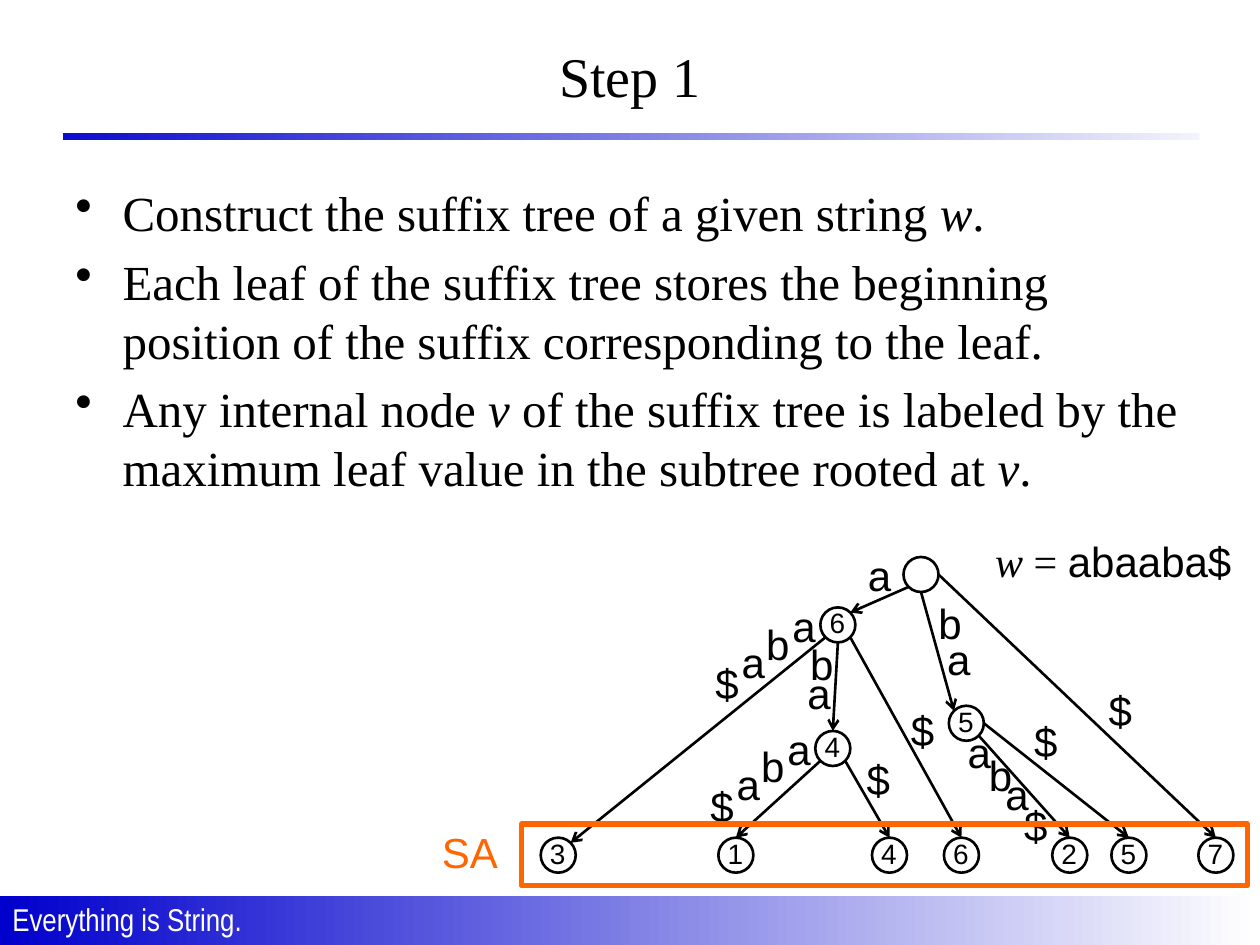
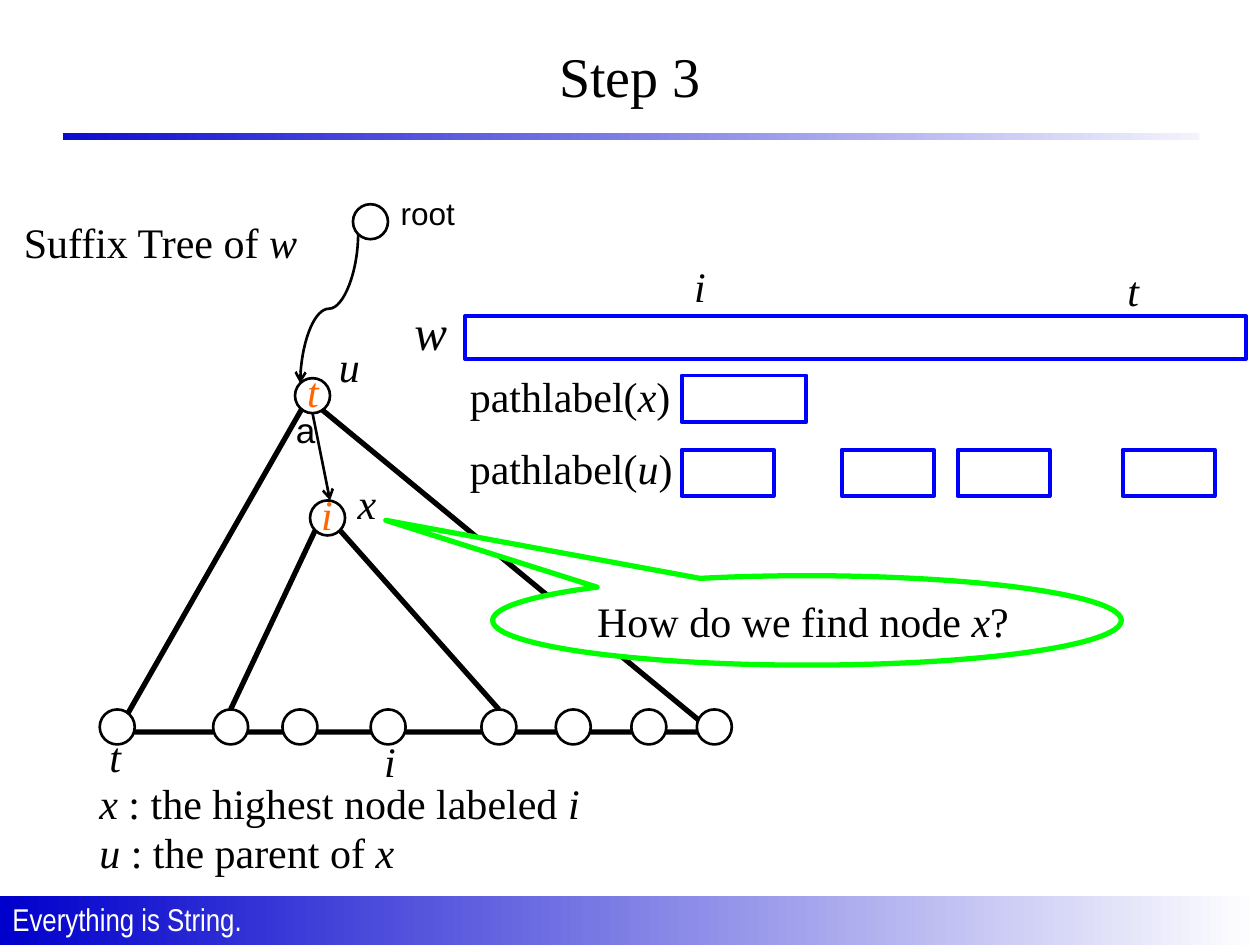
from math import cos, radians, sin

from lxml.etree import SubElement
from pptx import Presentation
from pptx.dml.color import RGBColor
from pptx.enum.shapes import MSO_CONNECTOR as CONN, MSO_SHAPE as SHAPE
from pptx.enum.text import MSO_ANCHOR as ANCHOR, MSO_AUTO_SIZE as AUTO, PP_ALIGN as ALIGN
from pptx.oxml.ns import qn
from pptx.util import Pt

COLORS = {"ink": "000000", "paper": "FFFFFF", "band": "0000CC",
          "accent": "FF6600", "bar": "0000FF", "callout": "00FF00"}
SERIF, SANS, NARROW = "Times New Roman", "Arial", "Arial Narrow"
WIDTH, HEIGHT = 720, 540
RADIUS = 10
ANGLES = {"right": 0, "lower right": 45, "bottom": 90, "lower left": 135,
          "upper left": 225, "top": 270, "upper right": 315}


def rgb(name):
    return RGBColor.from_string(COLORS[name])


def site(center, side):
    """Point on the rim of a node, in points."""
    a = radians(ANGLES[side])
    return center[0] + RADIUS * cos(a), center[1] + RADIUS * sin(a)


def write(p, text, font=SERIF, size=24, color="ink", align=ALIGN.LEFT):
    """Append text to a paragraph; *stars* enclose italics."""
    p.alignment = align
    for n, part in enumerate(text.split("*")):
        if part:
            r = p.add_run()
            r.text = part
            r.font.name, r.font.size = font, Pt(size)
            r.font.color.rgb = rgb(color)
            r.font.italic = n % 2 == 1


class Deck:
    def __init__(self):
        self.prs = Presentation()
        self.prs.slide_width, self.prs.slide_height = Pt(WIDTH), Pt(HEIGHT)
        self.s = None

    def slide(self, title):
        self.s = self.prs.slides.add_slide(self.prs.slide_layouts[5])
        self.gradient(512, 28)
        self.text(0, 510.5, 160, "Everything is String.", font=NARROW, size=18, color="paper")
        self.gradient(76.2, 3.8)
        for left in (0, 685.4):
            self.shape(SHAPE.RECTANGLE, left, 57.6, 36, 54, fill="paper")
        sp = self.s.shapes.title
        sp.left, sp.top, sp.width, sp.height = Pt(36), Pt(9.4), Pt(648), Pt(67)
        tf = sp.text_frame
        tf.auto_size, tf.vertical_anchor = AUTO.NONE, ANCHOR.MIDDLE
        write(tf.paragraphs[0], title, size=32, align=ALIGN.CENTER)

    def shape(self, kind, left, top, width, height, fill=None, line=None, weight=1.5):
        sp = self.s.shapes.add_shape(kind, Pt(left), Pt(top), Pt(width), Pt(height))
        sp.shadow.inherit = False
        if fill:
            sp.fill.solid()
            sp.fill.fore_color.rgb = rgb(fill)
        else:
            sp.fill.background()
        if line:
            sp.line.color.rgb, sp.line.width = rgb(line), Pt(weight)
        else:
            sp.line.fill.background()
        return sp

    def gradient(self, top, height):
        """Full-width band fading to the right."""
        fill = self.shape(SHAPE.RECTANGLE, 0, top, WIDTH, height).fill
        fill.gradient()
        fill.gradient_angle = 0
        for stop, name in zip(fill.gradient_stops, ("band", "paper")):
            stop.color.rgb = rgb(name)

    def text(self, left, top, width, text, size=24, **style):
        """One-line text box; returns its paragraph."""
        tb = self.s.shapes.add_textbox(Pt(left), Pt(top), Pt(width), Pt(1.2 * size + 7.2))
        tf = tb.text_frame
        tf.word_wrap, tf.auto_size = False, AUTO.SHAPE_TO_FIT_TEXT
        write(tf.paragraphs[0], text, size=size, **style)
        return tf.paragraphs[0]

    def bullets(self, left, top, width, height, items, size=28, indent=27):
        tf = self.s.shapes.add_textbox(Pt(left), Pt(top), Pt(width), Pt(height)).text_frame
        tf.word_wrap = True
        for n, item in enumerate(items):
            p = tf.add_paragraph() if n else tf.paragraphs[0]
            p.space_before = Pt(0.2 * size)
            pPr = p._p.get_or_add_pPr()
            pPr.set("marL", str(Pt(indent)))
            pPr.set("indent", str(-Pt(indent)))
            SubElement(pPr, qn("a:buChar")).set("char", "•")
            write(p, item, size=size)

    def node(self, center, label=None, fill=None):
        x, y = center
        self.shape(SHAPE.OVAL, x - RADIUS, y - RADIUS, 2 * RADIUS, 2 * RADIUS, fill, "ink")
        if label:
            self.text(x - 11.8, y - 14.4, 23.8, label, font=SANS, size=16)

    def edge(self, start, end, kind=CONN.STRAIGHT, weight=1.5, arrow=True):
        c = self.s.shapes.add_connector(kind, *(Pt(v) for v in (*start, *end)))
        c.line.color.rgb, c.line.width = rgb("ink"), Pt(weight)
        spPr = c._element.spPr
        if arrow:
            SubElement(spPr.find(qn("a:ln")), qn("a:tailEnd")).set("type", "arrow")
        SubElement(spPr, qn("a:effectLst"))
        return c

    def falling_curve(self, start, end):
        """S-curve that leaves and arrives vertically: a sideways one turned by 90°."""
        (x1, y1), (x2, y2) = start, end
        cx, cy, w, h = (x1 + x2) / 2, (y1 + y2) / 2, y2 - y1, x1 - x2
        c = self.edge((cx - w / 2, cy - h / 2), (cx + w / 2, cy + h / 2), CONN.CURVE)
        c._element.spPr.xfrm.rot = 90

    def letters(self, left, top, label, steps=((0, 0),)):
        """Edge label, one letter per step from the first letter's corner."""
        for letter, (dx, dy) in zip(label, steps):
            self.text(left + dx, top + dy, 28, letter, font=SANS)


def step_1(d):
    d.slide("Step 1")
    d.bullets(36, 100.8, 648, 381.6, [
        "Construct the suffix tree of a given string *w*.",
        "Each leaf of the suffix tree stores the beginning position of the suffix "
        "corresponding to the leaf.",
        "Any internal node *v* of the suffix tree is labeled by the maximum leaf value "
        "in the subtree rooted at *v*."])

    leaf_x = {"3": 319, "1": 420.5, "4": 508.3, "6": 549.4, "2": 611.3, "5": 645.1, "7": 694.8}
    leaves = {label: (x, 488.7) for label, x in leaf_x.items()}
    root, max6, max5, max4 = (526.3, 328.3), (478.8, 357.1), (552.2, 413.3), (475.9, 427.7)
    for start, side, end, end_side in [
            (root, "lower left", max6, "upper right"),
            (root, "bottom", max5, "upper left"),
            (root, "right", leaves["7"], "top"),
            (max6, "lower left", leaves["3"], "upper right"),
            (max6, "bottom", max4, "top"),
            (max6, "lower right", leaves["6"], "top"),
            (max4, "lower left", leaves["1"], "top"),
            (max4, "lower right", leaves["4"], "top"),
            (max5, "lower right", leaves["2"], "top"),
            (max5, "right", leaves["5"], "top")]:
        d.edge(site(start, side), site(end, end_side))

    d.node(root)
    for center, label in [(max6, "6"), (max5, "5"), (max4, "4")]:
        d.node(center, label)
    for label, center in leaves.items():
        d.node(center, label)

    leftward = [(0, 0), (-15, 10), (-29, 20.2), (-44, 32.6)]
    for left, top in [(445.7, 339.8), (442.8, 409.7)]:
        d.letters(left, top, "aba$", leftward)
    d.letters(545.8, 411.8, "aba$", [(0, 0), (12.2, 13), (21.6, 23.8), (32.4, 41.8)])
    d.letters(529.2, 337.7, "ba", [(0, 0), (5, 20.9)])
    d.letters(455.8, 361.4, "ba", [(0, 0), (-1.5, 16.6)])
    d.letters(488.9, 310.3, "a")
    for left, top in [(626.4, 387.4), (583.9, 405.4), (513.4, 398.9), (488.2, 427)]:
        d.letters(left, top, "$")

    p = d.text(561.6, 302.4, 152, "*w* = ")
    write(p, "abaaba$", font=SANS)
    d.shape(SHAPE.RECTANGLE, 298.1, 470.9, 414.7, 35.3, line="accent", weight=3)
    d.text(245.5, 468.7, 48.2, "SA", font=SANS, color="accent")


def step_3(d):
    d.slide("Step 3")
    root, u, x = (211.7, 126.7), (178.6, 226.1), (187.2, 296)
    leaves = [(cx, 415.4) for cx in (67, 131.8, 171.4, 221.8, 285.1, 327.6, 370.8, 408.2)]

    tree = d.shape(SHAPE.ISOSCELES_TRIANGLE, 67, 227.5, 340.6, 190.8, line="ink", weight=3)
    tree.adjustments[0] = 0.32
    for center in [root, u, x, *leaves]:
        d.node(center, fill="paper")
    d.falling_curve(site(root, "lower left"), site(u, "upper left"))
    d.edge(site(u, "bottom"), (188.6, 286))
    for side, leaf in [("lower left", leaves[1]), ("lower right", leaves[4])]:
        d.edge(site(x, side), site(leaf, "top"), weight=3, arrow=False)

    d.text(221.8, 107.3, 46, "root", font=SANS, size=18)
    d.text(162, 229.7, 26, "a", font=SANS, size=20)
    d.text(176.4, 275.8, 23, "*i*", color="accent")
    d.text(168.5, 205.2, 24.5, "*t*", color="accent")
    d.text(229.7, 168.5, 35.3, "*w*", size=28)
    for left, top, width, text in [
            (6.5, 120.2, 179.3, "Suffix Tree of *w*"),
            (186.5, 190.8, 29.5, "*u*"),
            (197.3, 269.3, 27.4, "*x*"),
            (55.4, 414, 24.5, "*t*"),
            (212.4, 416.9, 23, "*i*"),
            (389.5, 145.4, 23, "*i*"),
            (637.2, 147.6, 24.5, "*t*"),
            (261.4, 208.1, 130.3, "pathlabel(*x*)"),
            (261.4, 249.1, 131.8, "pathlabel(*u*)"),
            (49.7, 440.6, 298.8, "*x *: the highest node labeled *i*"),
            (49.7, 468.7, 191.5, "*u *: the parent of *x*")]:
        d.text(left, top, width, text)

    bars = [(265.7, 180.7, 446.4, 24.5), (389.5, 214.6, 71.3, 26.6)]
    bars += [(left, 257, 52.6, 26.6) for left in (389.5, 481, 547.2, 641.5)]
    for bar in bars:
        d.shape(SHAPE.RECTANGLE, *bar, line="bar", weight=2.25)

    question = d.shape(SHAPE.OVAL_CALLOUT, 281.5, 329, 359.3, 51.1, "paper", "callout", 3)
    question.adjustments[0], question.adjustments[1] = -0.67, -1.12
    tf = question.text_frame
    tf.word_wrap, tf.vertical_anchor = True, ANCHOR.MIDDLE
    write(tf.paragraphs[0], "How do we find node *x*?")


def main():
    d = Deck()
    step_1(d)
    step_3(d)
    d.prs.save("out.pptx")


if __name__ == "__main__":
    main()
